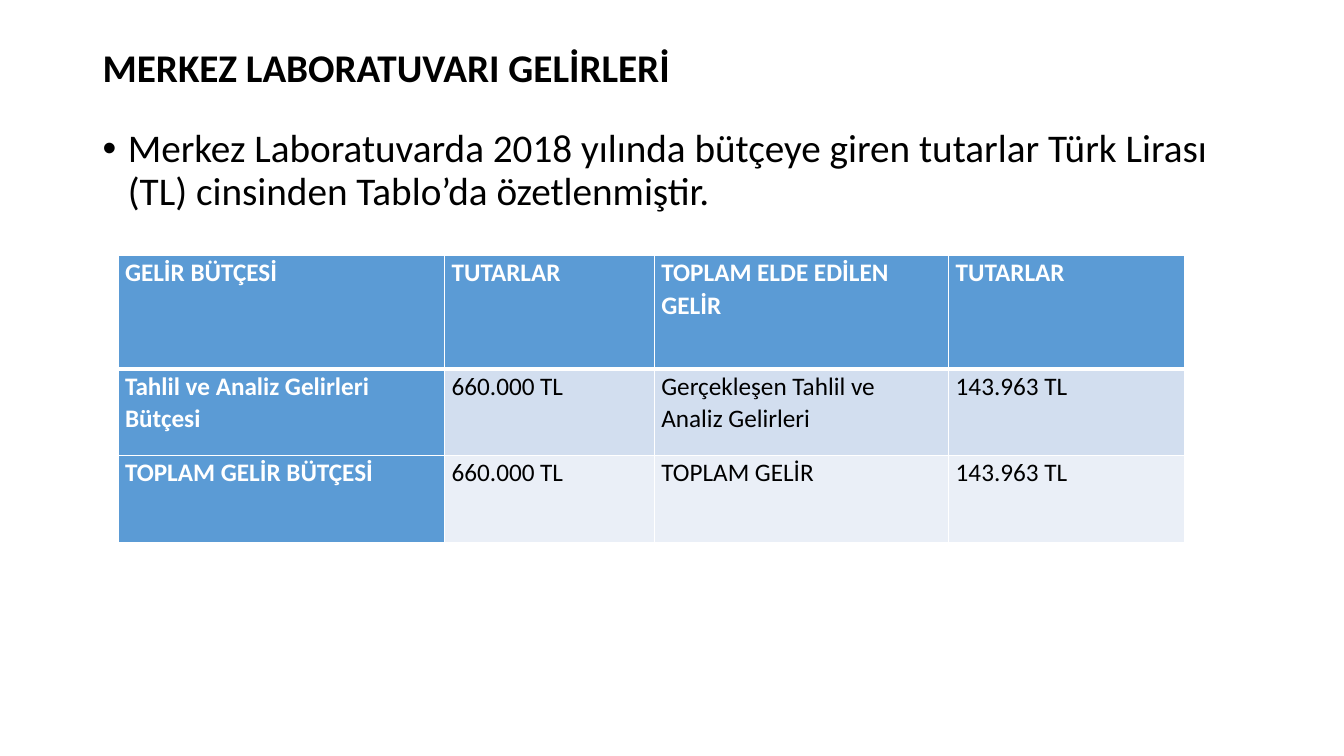
"""Builds the slide on the income of the central laboratory."""
from lxml.etree import SubElement
from pptx import Presentation
from pptx.dml.color import RGBColor
from pptx.enum.text import MSO_ANCHOR as Anchor
from pptx.oxml.ns import qn
from pptx.util import Inches, Pt

THEME = {
    "font": "Calibri", "text_size": 28, "table_size": 18,
    "black": "000000", "white": "FFFFFF", "blue": "5B9BD5",
    "bands": ["D2DEEF", "EAEFF7"],
}
LEFT, WIDTH = 0.92, 11.5
COLUMNS = [3.24, 2.08, 2.92, 2.34]
ROWS = [1.13, 0.86, 0.86]
INCOME = [
    ["GELİR BÜTÇESİ", "TUTARLAR", "TOPLAM ELDE EDİLEN GELİR", "TUTARLAR"],
    ["Tahlil ve Analiz Gelirleri Bütçesi", "660.000 TL",
     "Gerçekleşen Tahlil ve Analiz Gelirleri", "143.963 TL"],
    ["TOPLAM GELİR BÜTÇESİ", "660.000 TL", "TOPLAM GELİR", "143.963 TL"],
]


def write(frame, text, size, color, bold, spacing):
    """Fill a text frame with one formatted paragraph and return it."""
    frame.word_wrap = True
    para = frame.paragraphs[0]
    para.text = text
    para.line_spacing = spacing
    font = para.runs[0].font
    font.name, font.size, font.bold = THEME["font"], Pt(size), bold
    font.color.rgb = RGBColor.from_string(color)
    return para


def add_border(cell, side, points):
    """Draw a white border on one side of a table cell."""
    line = SubElement(cell._tc.get_or_add_tcPr(), qn(f"a:{side}"), w=str(Pt(points)))
    fill = SubElement(line, qn("a:solidFill"))
    SubElement(fill, qn("a:srgbClr"), val=THEME["white"])


deck = Presentation()
deck.slide_width, deck.slide_height = Inches(13.33), Inches(7.5)
page = deck.slides.add_slide(deck.slide_layouts[6])

title = page.shapes.add_textbox(Inches(LEFT), Inches(0.4), Inches(WIDTH), Inches(0.58))
title.text_frame.vertical_anchor = Anchor.MIDDLE
write(title.text_frame, "MERKEZ LABORATUVARI GELİRLERİ",
      THEME["text_size"], THEME["black"], True, 0.9)

body = page.shapes.add_textbox(Inches(LEFT), Inches(1.23), Inches(WIDTH), Inches(5.52))
para = write(
    body.text_frame,
    "Merkez Laboratuvarda 2018 yılında bütçeye giren tutarlar Türk Lirası (TL) "
    "cinsinden Tablo’da özetlenmiştir.",
    THEME["text_size"], THEME["black"], False, 0.9)
para.space_before = Pt(10)
properties = para._p.get_or_add_pPr()
properties.set("marL", str(Inches(0.25)))
properties.set("indent", str(-Inches(0.25)))
SubElement(properties, qn("a:buFont"), typeface="Arial")
SubElement(properties, qn("a:buChar"), char="•")

table = page.shapes.add_table(
    len(ROWS), len(COLUMNS), Inches(1.17), Inches(2.53),
    Inches(sum(COLUMNS)), Inches(sum(ROWS))).table
for column, width in zip(table.columns, COLUMNS):
    column.width = Inches(width)
for row, height in zip(table.rows, ROWS):
    row.height = Inches(height)

for row_index, texts in enumerate(INCOME):
    for column_index, text in enumerate(texts):
        cell = table.cell(row_index, column_index)
        heading = row_index == 0 or column_index == 0
        cell.margin_left = cell.margin_right = Inches(0.07)
        cell.margin_top = cell.margin_bottom = 0
        write(cell.text_frame, text, THEME["table_size"],
              THEME["white" if heading else "black"], heading, 1.07)
        for side in ("lnL", "lnR", "lnT", "lnB"):
            header_edge = (row_index, side) in ((0, "lnB"), (1, "lnT"))
            add_border(cell, side, 3 if header_edge else 1)
        cell.fill.solid()
        color = THEME["blue"] if heading else THEME["bands"][row_index - 1]
        cell.fill.fore_color.rgb = RGBColor.from_string(color)

deck.save("out.pptx")
